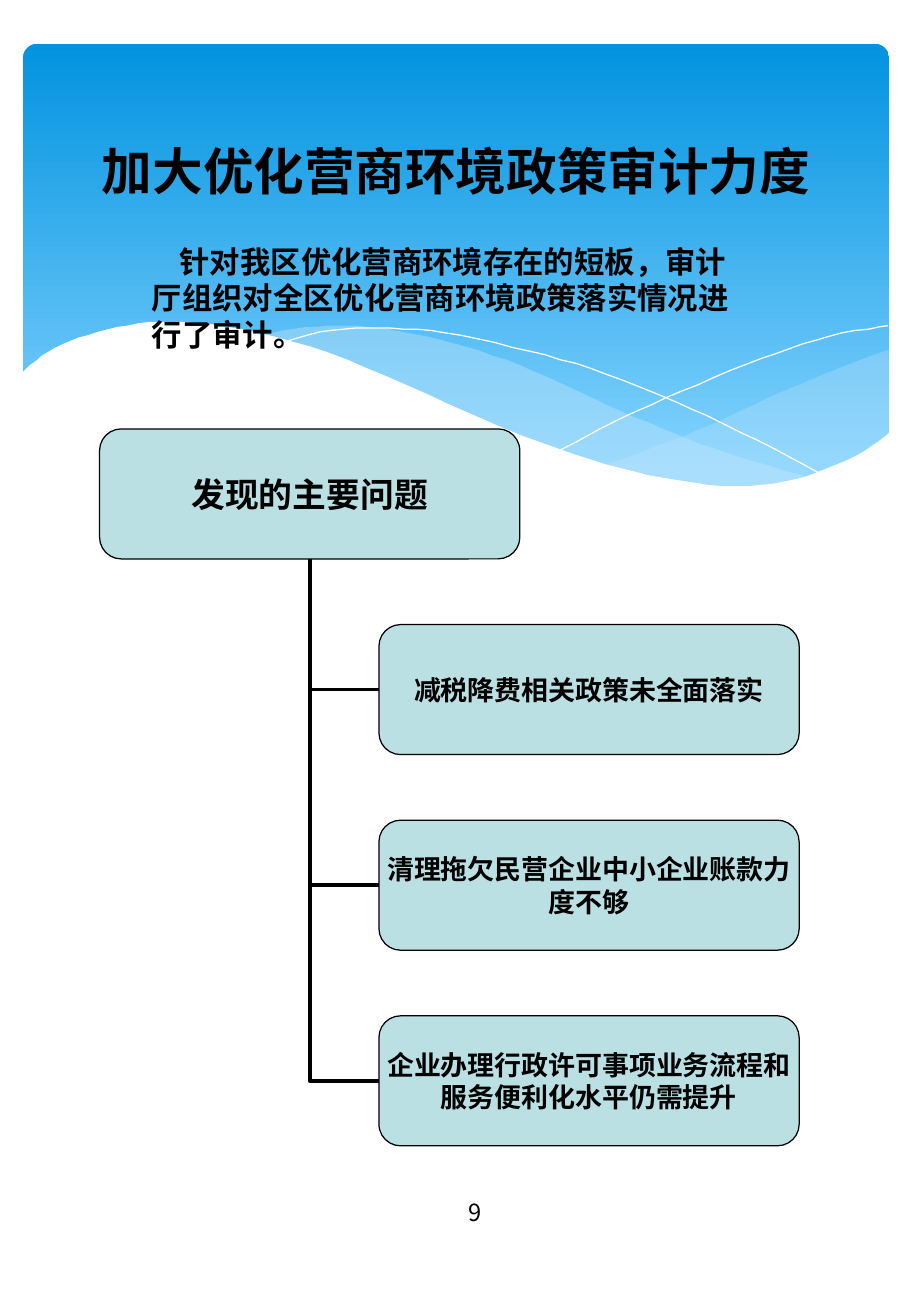
from lxml import etree
from pptx import Presentation, util as u
from pptx.dml.color import RGBColor
from pptx.enum import shapes, text
from pptx.oxml.ns import qn

SCALE = 9144  # EMU in one px, 100 px to the inch
FONT = "Noto Sans CJK SC"
LEADING = 1.2
BLACK, WHITE, CARD, WASH = "000000", "FFFFFF", "BBE0E3", "C6E7FC"

# Edges of the waves, in px from the banner's top left corner
WASHES = [
    (29, [
        [(713, 252), (682, 263), (626, 286), (565, 314), (510, 336), (477, 347)],
        [(477, 347), (530, 360), (583, 365), (635, 360), (677, 345), (713, 321)],
    ]),
    (40, [
        [(196, 240), (227, 234), (266, 232), (312, 237), (367, 250),
         (419, 269), (482, 298), (537, 321), (586, 339), (651, 358)],
        [(651, 358), (602, 366), (561, 365), (512, 357), (457, 341),
         (378, 311), (318, 284), (268, 263), (223, 247), (196, 240)],
    ]),
]
STROKES = [
    [(213, 246), (245, 237), (293, 234), (348, 238), (417, 253),
     (480, 272), (551, 301), (604, 326), (661, 356)],
    [(441, 335), (485, 312), (542, 286), (608, 259), (663, 241), (712, 232)],
]
WHITE_WAVE = [
    [(-2, 272), (8, 263), (31, 248), (70, 235), (113, 229), (168, 233),
     (236, 249), (316, 281), (397, 317), (467, 342), (526, 357), (587, 364),
     (638, 358), (686, 339), (714, 319)],
    [(714, 439), (-2, 439)],
]

PROBLEMS = [
    "减税降费相关政策未全面落实",
    "清理拖欠民营企业中小企业账款力度不够",
    "企业办理行政许可事项业务流程和服务便利化水平仍需提升",
]


def px(*lengths):
    return [u.Emu(length * SCALE) for length in lengths]


def color(value):
    return RGBColor.from_string(value)


def assign(target, values):
    for name, value in values.items():
        setattr(target, name, value)


def write(shape, content, size, bold=True, margins=(10, 5), indent=0, **frame_format):
    frame = shape.text_frame
    side, edge = px(*margins)
    assign(frame, {
        "word_wrap": True, "margin_left": side, "margin_right": side,
        "margin_top": edge, "margin_bottom": edge,
        "auto_size": text.MSO_AUTO_SIZE.NONE,
        "vertical_anchor": text.MSO_ANCHOR.MIDDLE, **frame_format,
    })
    paragraph = frame.paragraphs[0]
    assign(paragraph, {
        "alignment": text.PP_ALIGN.LEFT if indent else text.PP_ALIGN.CENTER,
        "line_spacing": u.Pt(size * LEADING),
    })
    if indent:
        paragraph._p.get_or_add_pPr().set("indent", str(indent * SCALE))
    run = paragraph.add_run()
    run.text = content
    assign(run.font, {"size": u.Pt(size), "bold": bold, "name": FONT})
    run.font.color.rgb = color(BLACK)
    etree.SubElement(run.font._element, qn("a:ea")).set("typeface", FONT)


def smooth(points, steps=5):
    """Return points along a Catmull-Rom curve through the given ones."""
    padded = [points[0], *points, points[-1]]
    curve = [points[0]]
    for a, b, c, d in zip(padded, padded[1:], padded[2:], padded[3:]):
        for step in range(1, steps + 1):
            t = step / steps
            curve.append(tuple(
                0.5 * (2 * q + (r - p) * t + (2 * p - 5 * q + 4 * r - s) * t**2
                       + (3 * q - p - 3 * r + s) * t**3)
                for p, q, r, s in zip(a, b, c, d)))
    return curve


def add_wave(slide, origin, edges, closed=True):
    points = [point for edge in edges for point in smooth(edge)]
    builder = slide.shapes.build_freeform(*points[0], scale=SCALE)
    builder.add_line_segments(points[1:], close=closed)
    wave = builder.convert_to_shape(*px(*origin))
    wave.shadow.inherit = False
    return wave


def add_filled_wave(slide, origin, edges, fill, opacity=100):
    wave = add_wave(slide, origin, edges)
    wave.line.fill.background()
    wave.fill.solid()
    wave.fill.fore_color.rgb = color(fill)
    if opacity < 100:
        tone = wave._element.spPr.find(".//" + qn("a:srgbClr"))
        etree.SubElement(tone, qn("a:alpha")).set("val", str(opacity * 1000))


def add_banner(slide, left, top, width, height):
    banner = slide.shapes.add_shape(
        shapes.MSO_SHAPE.ROUNDED_RECTANGLE, *px(left, top, width, height))
    banner.adjustments[0] = 0.03
    banner.shadow.inherit = False
    banner.line.fill.background()
    banner.fill.gradient()
    banner.fill.gradient_angle = 270
    stops = [(0, "0293E0"), (0.9, "83D3FE")]
    for stop, (position, value) in zip(banner.fill.gradient_stops, stops):
        stop.position = position
        stop.color.rgb = color(value)

    origin = left, top
    for opacity, edges in WASHES:
        add_filled_wave(slide, origin, edges, WASH, opacity)
    for stroke in STROKES:
        wave = add_wave(slide, origin, [stroke], closed=False)
        wave.fill.background()
        wave.line.color.rgb = color(WHITE)
        wave.line.width = u.Pt(0)
    add_filled_wave(slide, origin, WHITE_WAVE, WHITE)


def add_title(slide, left, top, width, height):
    title = slide.shapes.title
    slide.shapes._spTree.append(title._element)  # in front of the banner
    assign(title, dict(zip(("left", "top", "width", "height"),
                           px(left, top, width, height))))
    write(title, "加大优化营商环境政策审计力度", 30,
          vertical_anchor=text.MSO_ANCHOR.TOP)


def add_text(slide, box, content, size, **options):
    write(slide.shapes.add_textbox(*px(*box)), content, size, **options)


def add_card(slide, box, content, size):
    card = slide.shapes.add_shape(shapes.MSO_SHAPE.ROUNDED_RECTANGLE, *px(*box))
    card.shadow.inherit = False
    card.fill.solid()
    card.fill.fore_color.rgb = color(CARD)
    card.line.color.rgb = color(BLACK)
    card.line.width = u.Pt(0.75)
    write(card, content, size, margins=(0, 0))
    return card


def join(slide, parent, child):
    """Draw one bend from the child's left side up to the parent's bottom."""
    connector = slide.shapes.add_connector(shapes.MSO_CONNECTOR.ELBOW, 0, 0, 0, 0)
    connector.begin_connect(child, 1)
    connector.end_connect(parent, 2)
    connector.line.color.rgb = color(BLACK)
    connector.line.width = u.Pt(2.25)
    properties = connector._element.spPr
    properties.find(qn("a:prstGeom")).set("prst", "bentConnector2")
    etree.SubElement(properties, qn("a:effectLst"))


def add_problem_tree(slide, left, top, width, height):
    card_width, card_height, pitch = 346, 107, (height - 107) // len(PROBLEMS)
    root = add_card(slide, (left, top, card_width, card_height), "发现的主要问题", 20)
    for row, problem in enumerate(PROBLEMS, 1):
        box = left + width - card_width, top + row * pitch, card_width, card_height
        join(slide, root, add_card(slide, box, problem, 16))


def main():
    presentation = Presentation()
    presentation.slide_width, presentation.slide_height = px(750, 1083)
    slide = presentation.slides.add_slide(presentation.slide_layouts[5])
    add_banner(slide, 19, 36, 713, 390)
    add_title(slide, 36, 110, 679, 62)
    add_text(slide, (328, 959, 126, 77), "9", 14, bold=False)
    add_problem_tree(slide, 82, 353, 576, 590)
    add_text(slide, (115, 195, 512, 101),
             "针对我区优化营商环境存在的短板，审计厅组织对全区优化营商环境政策落实情况进行了审计。",
             18, indent=23, vertical_anchor=text.MSO_ANCHOR.TOP)
    presentation.save("out.pptx")


if __name__ == "__main__":
    main()
